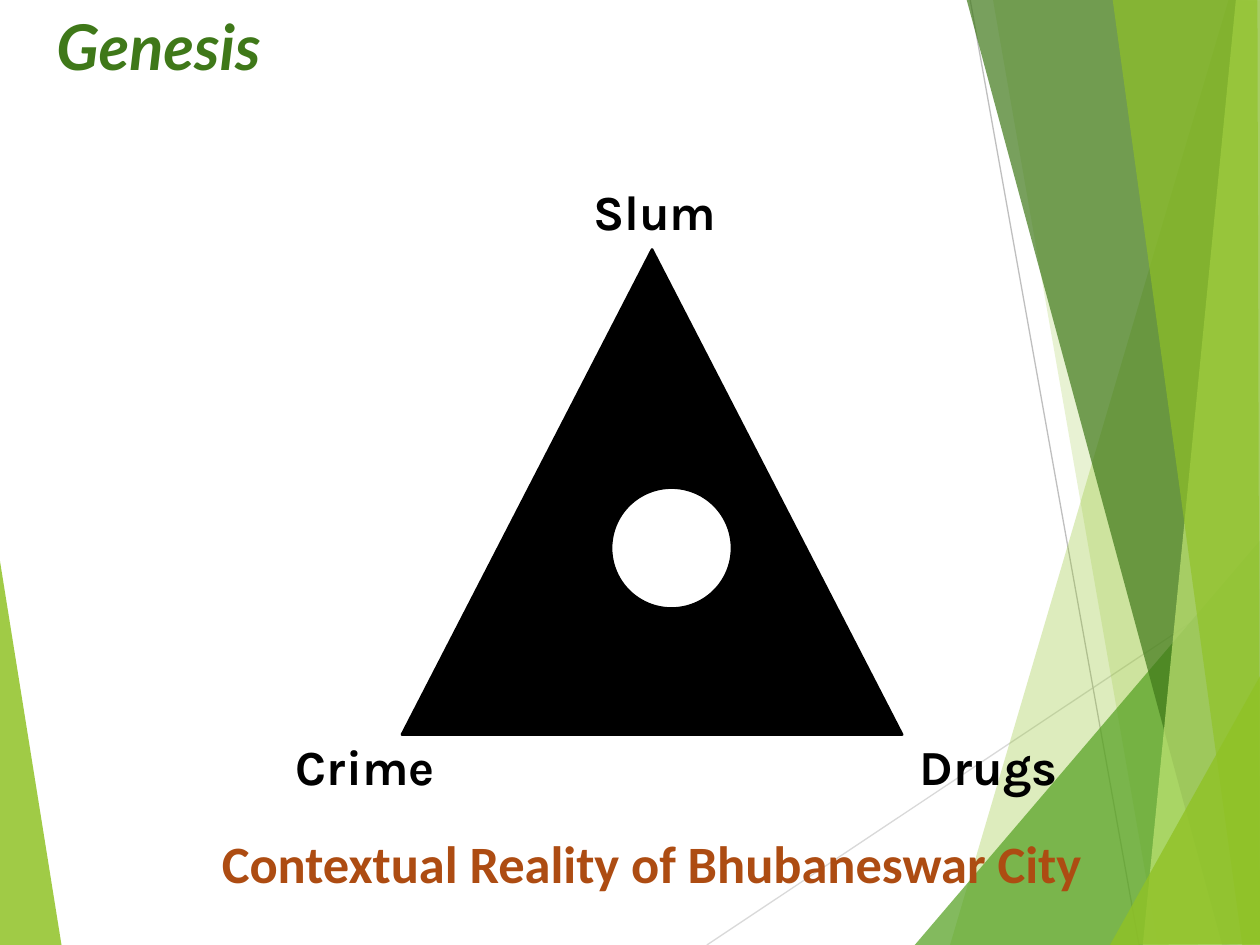
"""Build the Genesis slide: a slum, crime and drugs triangle on a green faceted background."""
from lxml import etree
from pptx import Presentation, util as u
from pptx.dml.color import RGBColor
from pptx.enum import shapes, text
from pptx.oxml.ns import qn

COLORS = {
    "lime": "90C226", "green": "54A021", "forest": "3F7819", "pale": "C0E474",
    "light_gray": "D9D9D9", "gray": "BFBFBF",
    "black": "000000", "white": "FFFFFF", "rust": "AD4C12",
}

LEFT_FACET = ("lime", 85, [(-0.01, 4.39), (0.49, 7.51), (-0.01, 7.5)])
RIGHT_FACETS = [
    ("lime", 30, [(9.75, 0), (7.54, 7.5), (10.02, 7.51), (10.01, 0.01)]),
    ("lime", 20, [(7.88, -0.01), (9.19, 7.5), (10.01, 7.5), (10.01, -0.01)]),
    ("green", 72, [(7.26, 7.5), (10, 4.29), (10.01, 7.5)]),
    ("forest", 70, [(7.67, -0.01), (9.7, 7.5), (10.01, 7.49), (10.01, -0.01)]),
    ("pale", 70, [(9.81, -0.01), (9.07, 7.5), (10.01, 7.5), (10, -0.01)]),
    ("lime", 65, [(8.83, -0.01), (9.86, 7.5), (10, 7.5), (9.98, -0.01)]),
    ("lime", 80, [(8.81, 7.5), (10.01, 5.35), (10.01, 7.49)]),
]
RAYS = [("light_gray", (5.61, 7.5), (10.01, 4.57)), ("gray", (7.7, 0), (9.04, 7.5))]
CORNERS = [("Crime", 2.25, 5.8), ("Drugs", 7.2, 5.8), ("Slum", 4.61, 1.39)]

TITLE_FORMAT = {"name": "Lato", "size": u.Pt(36), "bold": True, "italic": True}
CORNER_FORMAT = {"name": "Karla", "size": u.Pt(28), "bold": True}
CAPTION_FORMAT = {"name": "Calibri", "size": u.Pt(30), "bold": True}


def rgb(name):
    """Return the named colour."""
    return RGBColor.from_string(COLORS[name])


def inches(values):
    """Convert numbers to lengths."""
    return [u.Inches(value) for value in values]


def add_facet(slide, color, opacity, points):
    """Add a translucent polygon without an outline."""
    start, *others = [inches(point) for point in points]
    builder = slide.shapes.build_freeform(*start)
    builder.add_line_segments(others, close=True)
    shape = builder.convert_to_shape()
    shape.shadow.inherit = False
    shape.fill.solid()
    shape.fill.fore_color.rgb = rgb(color)
    shape.line.fill.background()
    color_element = shape.fill._xPr.find(qn("a:solidFill"))[0]
    etree.SubElement(color_element, qn("a:alpha"), val=str(opacity * 1000))


def add_ray(slide, color, start, end):
    """Add a thin background line."""
    connector = slide.shapes.add_connector(
        shapes.MSO_CONNECTOR.STRAIGHT, *inches(start + end))
    connector.line.color.rgb = rgb(color)
    connector.line.width = u.Pt(0.75)
    etree.SubElement(connector._element.spPr, qn("a:effectLst"))


def add_solid(slide, kind, box, color):
    """Add a filled preset shape with a black outline."""
    shape = slide.shapes.add_shape(kind, *inches(box))
    shape.shadow.inherit = False
    shape.fill.solid()
    shape.fill.fore_color.rgb = rgb(color)
    shape.line.color.rgb = rgb("black")
    shape.line.width = u.Pt(1.5)


def add_text(slide, content, box, color, font_format, alignment=text.PP_ALIGN.LEFT):
    """Add a wrapped one-line text box."""
    frame = slide.shapes.add_textbox(*inches(box)).text_frame
    frame.word_wrap = True
    paragraph = frame.paragraphs[0]
    paragraph.alignment = alignment
    run = paragraph.add_run()
    run.text = content
    for attribute, value in font_format.items():
        setattr(run.font, attribute, value)
    run.font.color.rgb = rgb(color)


def main():
    """Build and save the slide."""
    presentation = Presentation()
    presentation.slide_width = u.Inches(10)
    presentation.slide_height = u.Inches(7.5)
    slide = presentation.slides.add_slide(presentation.slide_layouts[6])

    add_facet(slide, *LEFT_FACET)
    for ray in RAYS:
        add_ray(slide, *ray)
    for facet in RIGHT_FACETS:
        add_facet(slide, *facet)

    add_text(slide, "Genesis", (0.35, 0.01, 9, 1.25), "forest", TITLE_FORMAT)
    add_solid(slide, shapes.MSO_SHAPE.FLOWCHART_EXTRACT, (3.19, 1.98, 3.97, 3.85), "black")
    add_solid(slide, shapes.MSO_SHAPE.OVAL, (4.85, 3.87, 0.96, 0.96), "white")
    for label, left, top in CORNERS:
        add_text(slide, label, (left, top, 1.64, 0.57), "black", CORNER_FORMAT)
    add_text(slide, "Contextual Reality of Bhubaneswar City", (0, 6.55, 10.35, 0.61),
             "rust", CAPTION_FORMAT, text.PP_ALIGN.CENTER)

    presentation.save("out.pptx")


if __name__ == "__main__":
    main()
